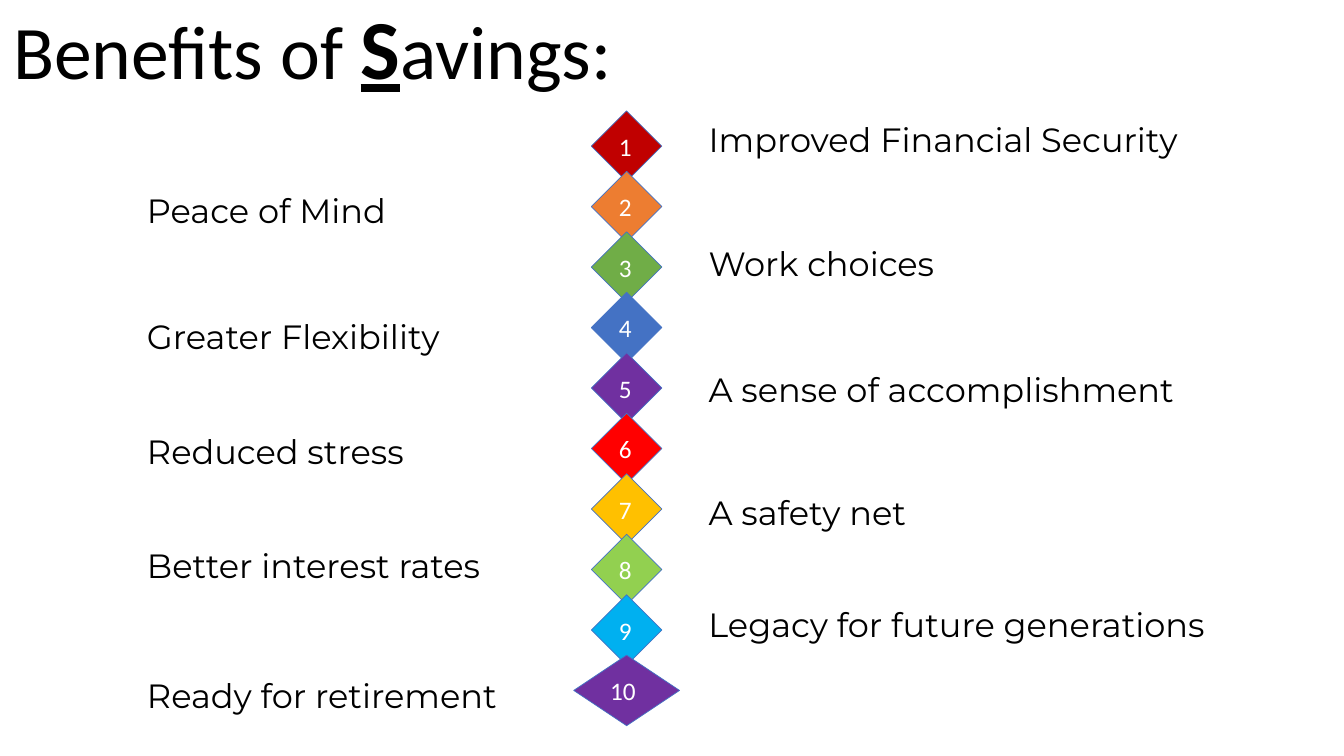
from dataclasses import dataclass

from pptx import Presentation
from pptx.dml.color import RGBColor
from pptx.enum import shapes, text
from pptx.util import Pt

BLACK = RGBColor(0x00, 0x00, 0x00)
WHITE = RGBColor(0xFF, 0xFF, 0xFF)
MAROON = RGBColor(0xC0, 0x00, 0x00)
ORANGE = RGBColor(0xED, 0x7D, 0x31)
GREEN = RGBColor(0x70, 0xAD, 0x47)
BLUE = RGBColor(0x44, 0x72, 0xC4)
PURPLE = RGBColor(0x70, 0x30, 0xA0)
RED = RGBColor(0xFF, 0x00, 0x00)
GOLD = RGBColor(0xFF, 0xC0, 0x00)
LIME = RGBColor(0x92, 0xD0, 0x50)
SKY = RGBColor(0x00, 0xB0, 0xF0)

LEFT, RIGHT = 97.9, 499  # label columns
AXIS = 447.6  # centre line of the diamonds
TOP, STEP = 79.2, 43.2
SIZE, WIDE = 50.4, 75.6


@dataclass
class Benefit:
    label: str
    top: float
    width: float
    fill: RGBColor


BENEFITS = [
    Benefit("Improved Financial Security", 81.4, 385.2, MAROON),
    Benefit("Peace of Mind", 131.8, 202.3, ORANGE),
    Benefit("Work choices", 169.9, 193, GREEN),
    Benefit("Greater Flexibility", 221.8, 253.4, BLUE),
    Benefit("A sense of accomplishment", 259.9, 382.3, PURPLE),
    Benefit("Reduced stress", 304.6, 220.3, RED),
    Benefit("A safety net", 347.8, 174.2, GOLD),
    Benefit("Better interest rates", 385.9, 286.6, LIME),
    Benefit("Legacy for future generations", 427.7, 407.5, SKY),
    Benefit("Ready for retirement", 478.8, 288.7, PURPLE),
]


def style(run, face: str, size: float, color: RGBColor) -> None:
    run.font.name = face
    run.font.size = Pt(size)
    run.font.color.rgb = color


def add_title(slide) -> None:
    title = slide.shapes.title
    title.left, title.top = Pt(2.2), Pt(1.4)
    title.width, title.height = Pt(828), Pt(104.4)
    frame = title.text_frame
    frame.auto_size = text.MSO_AUTO_SIZE.NONE
    frame.vertical_anchor = text.MSO_ANCHOR.TOP
    para = frame.paragraphs[0]
    para.alignment = text.PP_ALIGN.LEFT
    para.line_spacing = 0.9
    for part in ("Benefits of ", "S", "avings:"):
        run = para.add_run()
        run.text = part
        key = part == "S"
        style(run, "Calibri", 60 if key else 54, BLACK)
        run.font.bold = run.font.underline = key


def add_label(slide, item: Benefit, left: float) -> None:
    box = slide.shapes.add_textbox(Pt(left), Pt(item.top), Pt(item.width), Pt(36))
    frame = box.text_frame
    frame.text = item.label
    frame.word_wrap = False
    frame.auto_size = text.MSO_AUTO_SIZE.SHAPE_TO_FIT_TEXT
    style(frame.paragraphs[0].runs[0], "Montserrat", 24, BLACK)


def add_marker(slide, num: int, fill: RGBColor) -> None:
    width = WIDE if num > 9 else SIZE
    gem = slide.shapes.add_shape(
        shapes.MSO_SHAPE.DIAMOND,
        Pt(AXIS - width / 2), Pt(TOP + STEP * (num - 1)), Pt(width), Pt(SIZE),
    )
    gem.shadow.inherit = False
    gem.fill.solid()
    gem.fill.fore_color.rgb = fill
    gem.line.color.rgb = BLUE
    gem.line.width = Pt(0.5)
    frame = gem.text_frame
    frame.text = str(num)
    frame.vertical_anchor = text.MSO_ANCHOR.MIDDLE
    para = frame.paragraphs[0]
    para.alignment = text.PP_ALIGN.LEFT
    style(para.runs[0], "Calibri", 18, WHITE)


def main() -> None:
    deck = Presentation()
    deck.slide_width, deck.slide_height = Pt(960), Pt(540)
    slide = deck.slides.add_slide(deck.slide_layouts.get_by_name("Title Only"))
    add_title(slide)
    for num, item in enumerate(BENEFITS, 1):
        add_label(slide, item, RIGHT if num % 2 else LEFT)
        add_marker(slide, num, item.fill)
    deck.save("out.pptx")


if __name__ == "__main__":
    main()
